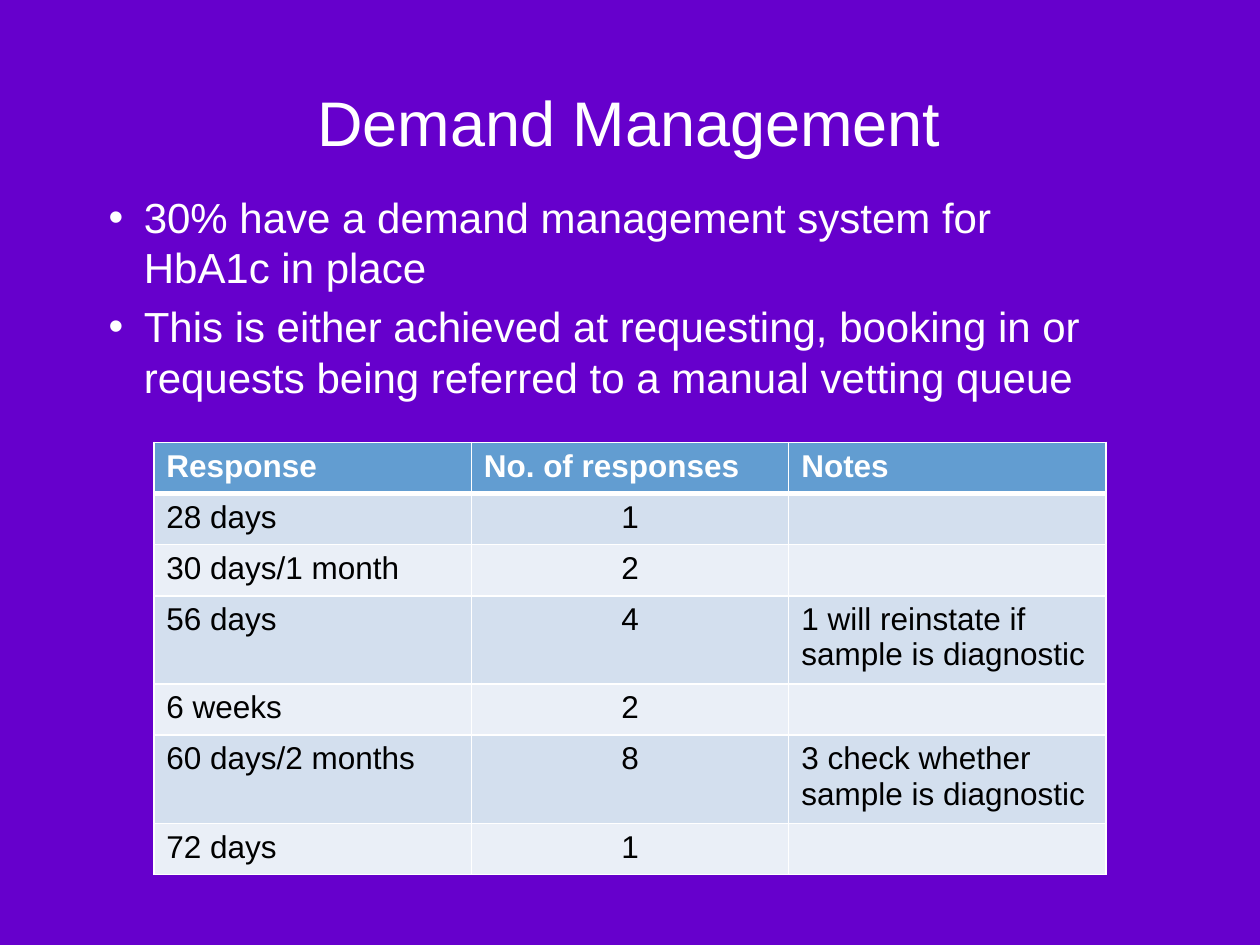
from lxml import etree
from pptx import Presentation
from pptx.dml.color import RGBColor
from pptx.enum.text import MSO_ANCHOR, PP_ALIGN
from pptx.oxml.ns import qn
from pptx.util import Cm, Pt

CENTER, LEFT = PP_ALIGN.CENTER, PP_ALIGN.LEFT
MIDDLE, BOTTOM = MSO_ANCHOR.MIDDLE, MSO_ANCHOR.BOTTOM

FONT = "Arial"
COLORS = {
    "page": "6600CC",
    "light": "FFFFFF",
    "dark": "000000",
    "header": "629DD1",
    "odd_row": "D3DFEE",
    "even_row": "EAEFF7",
}

TITLE = "Demand Management"
POINTS = [
    "30% have a demand management system for HbA1c in place",
    "This is either achieved at requesting, booking in or requests "
    "being referred to a manual vetting queue",
]
RESPONSES = [
    ("Response", "No. of responses", "Notes"),
    ("28 days", "1", ""),
    ("30 days/1 month", "2", ""),
    ("56 days", "4", "1 will reinstate if sample is diagnostic"),
    ("6 weeks", "2", ""),
    ("60 days/2 months", "8", "3 check whether sample is diagnostic"),
    ("72 days", "1", ""),
]


def color(name):
    return RGBColor.from_string(COLORS[name])


def style_font(font, size, color_name, bold=False):
    font.name = FONT
    font.size = Pt(size)
    font.bold = bold
    font.color.rgb = color(color_name)


def add_text_frame(page, box, anchor):
    frame = page.shapes.add_textbox(*box).text_frame
    frame.word_wrap = True
    frame.vertical_anchor = anchor
    return frame


def add_title(page, box, text):
    frame = add_text_frame(page, box, BOTTOM)
    frame.text = text
    para = frame.paragraphs[0]
    para.alignment = CENTER
    style_font(para.runs[0].font, 36, "light")


def add_bullets(page, box, points):
    frame = add_text_frame(page, box, MIDDLE)
    frame.margin_top = Cm(1.28)
    frame.text = "\n".join(points)
    for para in frame.paragraphs:
        para.space_before = Pt(5)
        style_font(para.runs[0].font, 24, "light")
        # Hanging bullet
        properties = para._p.get_or_add_pPr()
        properties.set("marL", str(Cm(0.75)))
        properties.set("indent", str(-Cm(0.71)))
        etree.SubElement(properties, qn("a:buFont"), typeface=FONT)
        etree.SubElement(properties, qn("a:buChar"), char="•")


def set_borders(cell, widths):
    properties = cell._tc.get_or_add_tcPr()
    for side, width in widths.items():
        line = etree.SubElement(properties, qn(f"a:ln{side}"), w=str(Pt(width)))
        fill = etree.SubElement(line, qn("a:solidFill"))
        etree.SubElement(fill, qn("a:srgbClr"), val=COLORS["light"])


def add_response_table(page, box, rows):
    table = page.shapes.add_table(len(rows), len(rows[0]), *box).table
    for row_index, row in enumerate(rows):
        header = row_index == 0
        fill_name = "header" if header else "odd_row" if row_index % 2 else "even_row"
        for column_index, text in enumerate(row):
            cell = table.cell(row_index, column_index)
            cell.text = text
            para = cell.text_frame.paragraphs[0]
            para.alignment = CENTER if column_index == 1 and not header else LEFT
            for span in para.runs:
                style_font(span.font, 18, "light" if header else "dark", header)
            # Thick rule between the header and the first row
            set_borders(cell, {"L": 1, "R": 1,
                               "T": 3 if row_index == 1 else 1,
                               "B": 3 if header else 1})
            cell.fill.solid()
            cell.fill.fore_color.rgb = color(fill_name)


def main():
    deck = Presentation()
    deck.slide_width, deck.slide_height = Cm(25.4), Cm(19.05)
    page = deck.slides.add_slide(deck.slide_layouts[6])
    page.background.fill.solid()
    page.background.fill.fore_color.rgb = color("page")

    add_bullets(page, (Cm(1.9), Cm(1.9), Cm(20.96), Cm(7)), POINTS)
    add_title(page, (Cm(2.2), Cm(0.8), Cm(20.96), Cm(2.54)), TITLE)
    # Rows with two lines of text grow beyond the even height
    row_height = Cm(1.03)
    add_response_table(
        page, (Cm(3.1), Cm(8.92), Cm(19.2), row_height * len(RESPONSES)), RESPONSES)
    deck.save("out.pptx")


if __name__ == "__main__":
    main()
